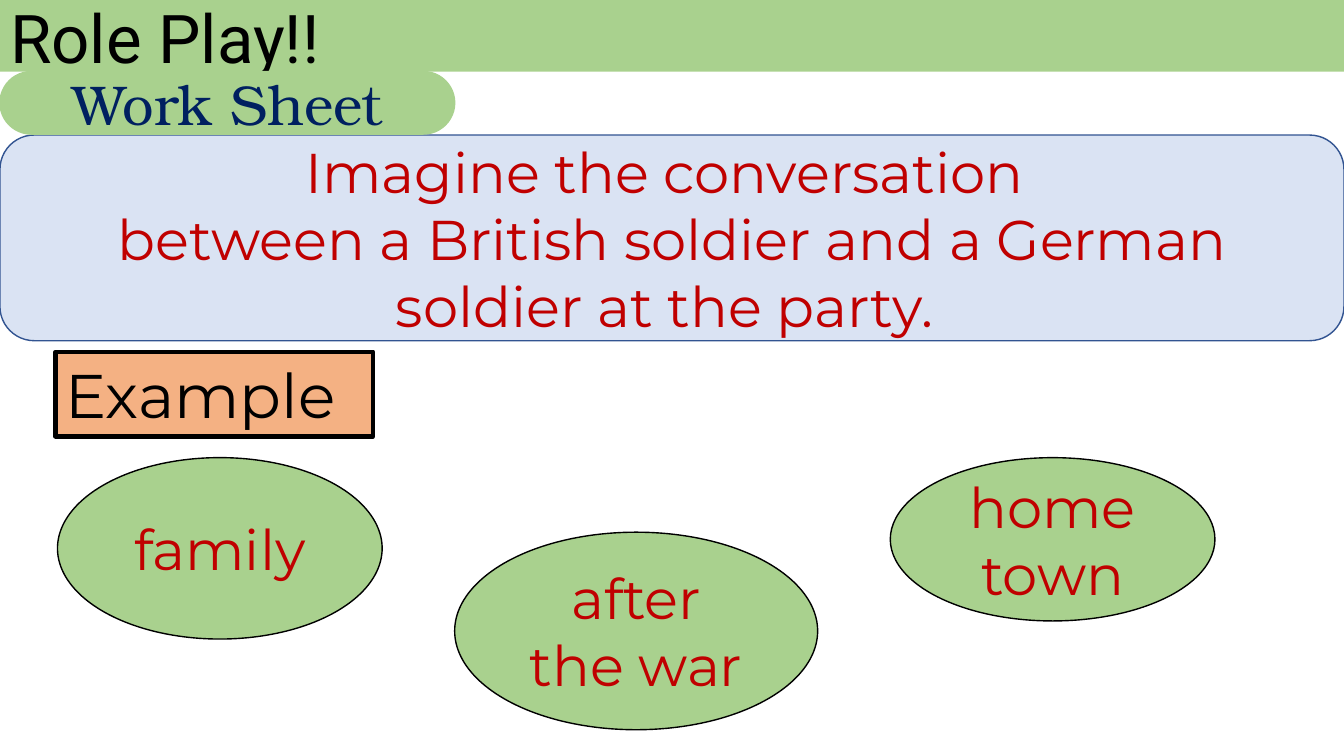
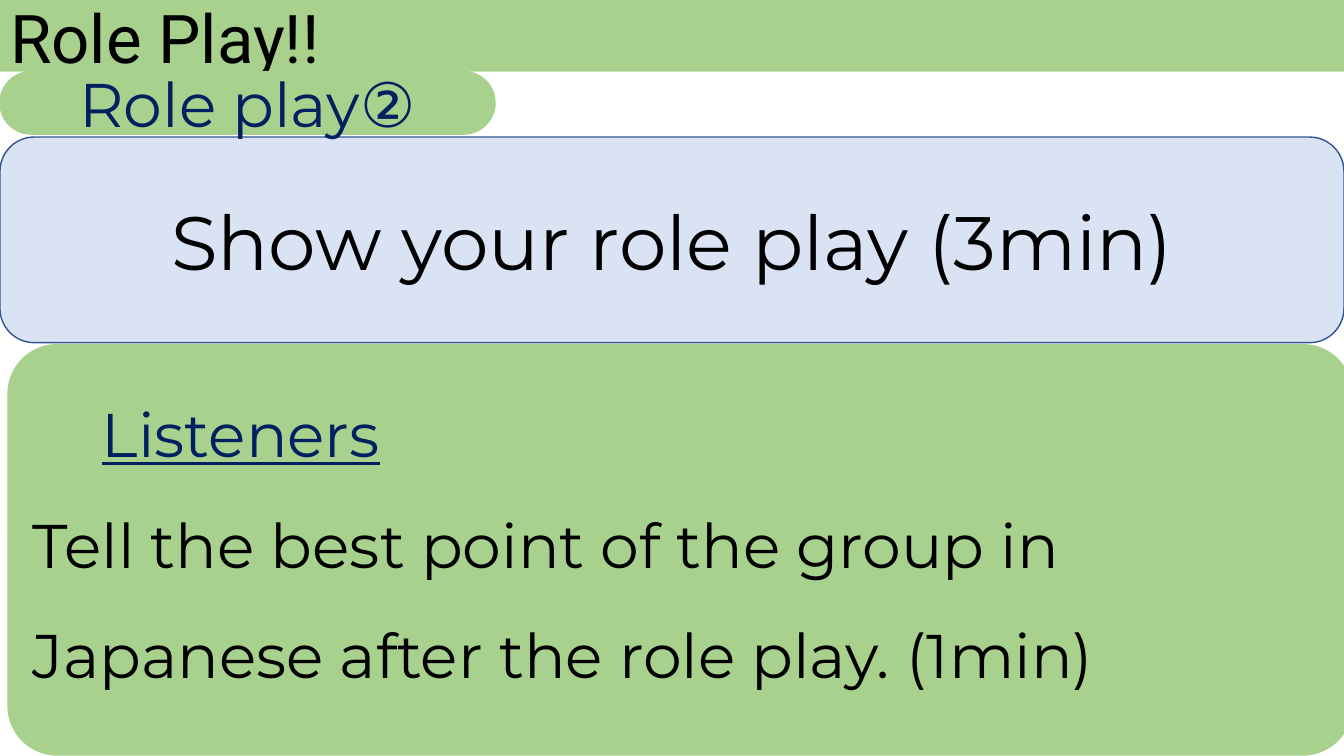
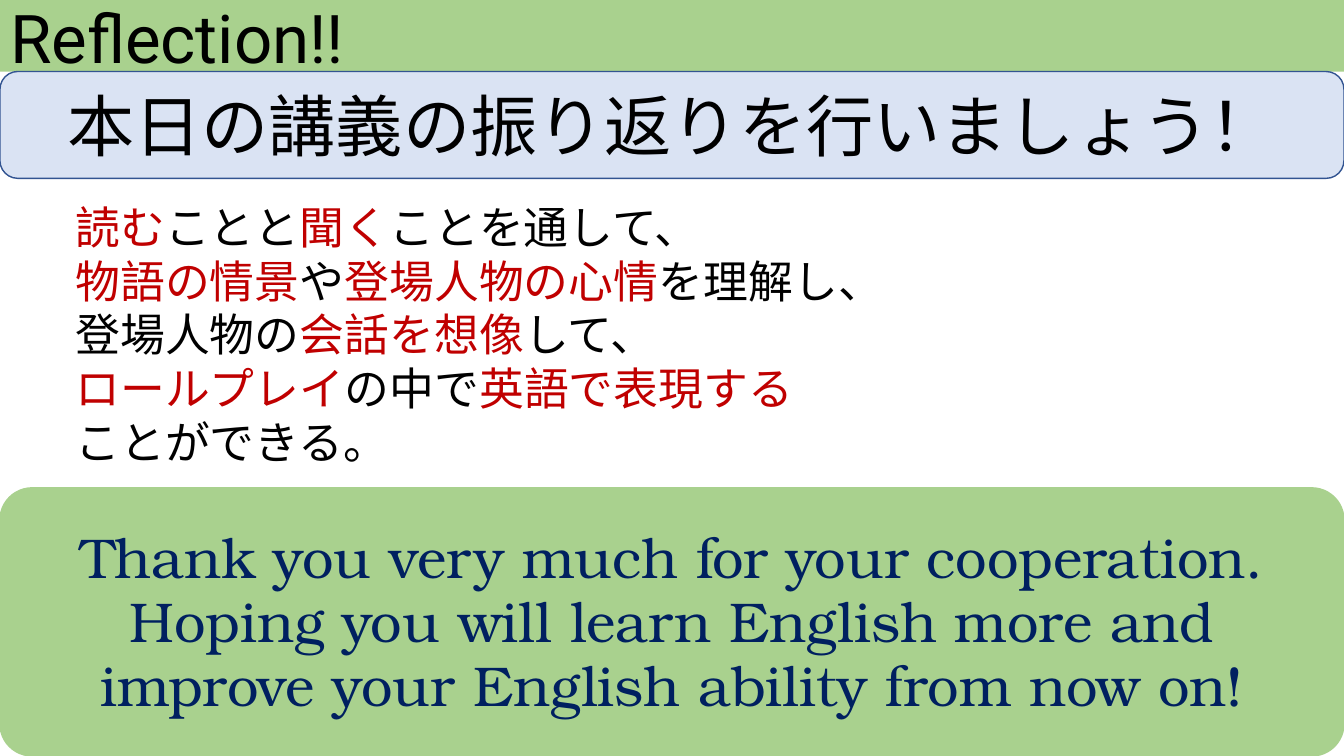
from dataclasses import dataclass

from lxml.etree import SubElement
from pptx import Presentation
from pptx.dml.color import RGBColor
from pptx.enum.shapes import MSO_SHAPE as SHAPE
from pptx.enum.text import MSO_ANCHOR as ANCHOR, MSO_AUTO_SIZE as AUTO_SIZE, PP_ALIGN as ALIGN
from pptx.oxml.ns import qn
from pptx.util import Emu, Pt

PX = 9144  # 100 px to the inch
WIDTH, HEIGHT = 1333, 750
BAND = 71


@dataclass(frozen=True)
class Theme:
    green: str = "A9D18E"
    pale_blue: str = "DAE3F3"
    blue_edge: str = "325491"
    orange: str = "F4B183"
    black: str = "000000"
    red: str = "C00000"
    navy: str = "002060"
    title_font: str = "Roboto"
    sans: str = "Montserrat"
    serif: str = "TeX Gyre Bonum"
    japanese: str = "Noto Sans CJK JP"
    small: int = 32
    body: int = 40
    large: int = 44
    title: int = 48
    huge: int = 54


T = Theme()


def write(frame, paragraphs, font, size, color, align=ALIGN.CENTER, spacing=None):
    """Fill a frame; each paragraph is a string or a list of (text, colour) runs."""
    frame.word_wrap = True
    frame.auto_size = AUTO_SIZE.NONE
    for index, content in enumerate(paragraphs):
        paragraph = frame.paragraphs[0] if index == 0 else frame.add_paragraph()
        paragraph.alignment = align
        paragraph.space_before = Pt(0)
        if spacing:
            paragraph.line_spacing = spacing
        runs = [(content, color)] if isinstance(content, str) else content
        for text, run_color in runs:
            run = paragraph.add_run()
            run.text = text
            run.font.size = Pt(size)
            run.font.color.rgb = RGBColor.from_string(run_color)
            run.font.name = font
            SubElement(run.font._element, qn("a:ea"), typeface=T.japanese)


def add_block(slide, preset, box, fill, edge, edge_width=1, corner=None):
    """Add a filled preset shape and return it; box is left, top, width, height in px."""
    block = slide.shapes.add_shape(preset, *(Emu(px * PX) for px in box))
    block.shadow.inherit = False
    block.fill.solid()
    block.fill.fore_color.rgb = RGBColor.from_string(fill)
    block.line.color.rgb = RGBColor.from_string(edge)
    block.line.width = Pt(edge_width)
    if corner is not None:
        block.adjustments[0] = corner
    return block


prs = Presentation()
prs.slide_width, prs.slide_height = Emu(WIDTH * PX), Emu(HEIGHT * PX)

# Every slide: the title sits in a green band across the top
slides = []
for heading in ("Role Play!!", "Role Play!!", "Reflection!!"):
    slide = prs.slides.add_slide(prs.slide_layouts[5])
    title = slide.shapes.title
    title.left = title.top = Emu(0)
    title.width, title.height = Emu(WIDTH * PX), Emu(BAND * PX)
    title.fill.solid()
    title.fill.fore_color.rgb = RGBColor.from_string(T.green)
    title.text_frame.vertical_anchor = ANCHOR.TOP
    title.text_frame.margin_bottom = 0
    write(title.text_frame, [heading], T.title_font, T.title, T.black, ALIGN.LEFT, 0.9)
    slides.append(slide)
worksheet, performance, reflection = slides

# Blue panel below each title
for slide, top, height, lines, font, size, color in (
    (worksheet, 134, 204,
     ["Imagine the conversation ",
      "between a British soldier and a German soldier at the party. "],
     T.sans, T.body, T.red),
    (performance, 136, 204, ["Show your role play (3min)"], T.sans, T.huge, T.black),
    (reflection, BAND, 106, ["本日の講義の振り返りを行いましょう！"],
     T.japanese, T.title, T.black),
):
    panel = add_block(slide, SHAPE.ROUNDED_RECTANGLE, (0, top, WIDTH, height),
                      T.pale_blue, T.blue_edge)
    write(panel.text_frame, lines, font, size, color)

# Section tabs of the two role play slides
for slide, width, label, font, size in (
    (worksheet, 451, "Work Sheet", T.serif, T.body),
    (performance, 491, "Role play②", T.sans, T.large),
):
    tab = add_block(slide, SHAPE.ROUNDED_RECTANGLE, (0, BAND, width, 62),
                    T.green, T.green, corner=0.5)
    write(tab.text_frame, [label], font, size, T.navy)

# Worksheet: example topics
for topic, box in (
    ("family", (57, 454, 322, 180)),
    ("home town", (883, 454, 322, 162)),
    ("after the war", (451, 528, 360, 196)),
):
    bubble = add_block(worksheet, SHAPE.OVAL, box, T.green, T.black)
    write(bubble.text_frame, [topic], T.sans, T.body, T.red)

example = add_block(worksheet, SHAPE.RECTANGLE, (55, 349, 315, 84), T.orange, T.black, 3)
write(example.text_frame, ["Example"], T.sans, T.large, T.black, ALIGN.LEFT)

# Performance: task for the listeners
listeners = add_block(performance, SHAPE.ROUNDED_RECTANGLE, (8, 342, WIDTH, 407),
                      T.green, T.green, corner=0.12)
task = listeners.text_frame
task.vertical_anchor = ANCHOR.TOP
task.margin_top = 0
write(task,
      [[("Listeners", T.navy)],
       "Tell the best point of the group in Japanese after the role play. (1min)"],
      T.sans, T.large, T.black, ALIGN.LEFT, Pt(79))
task.paragraphs[0].runs[0].font.underline = True
task.paragraphs[0]._p.get_or_add_pPr().set("marL", str(69 * PX))

# Reflection: closing words and lesson goals
thanks = add_block(reflection, SHAPE.ROUNDED_RECTANGLE, (0, 484, WIDTH, 266),
                   T.green, T.green, corner=0.12)
write(thanks.text_frame,
      ["Thank you very much for your cooperation.",
       "Hoping you will learn English more and improve your English ability from now on!"],
      T.serif, T.body, T.navy, spacing=Pt(45.8))

goals = reflection.shapes.add_textbox(*(Emu(px * PX) for px in (65, 193, 1196, 279)))
write(goals.text_frame,
      [[("読む", T.red), ("ことと", T.black), ("聞く", T.red), ("ことを通して、", T.black)],
       [("物語の情景", T.red), ("や", T.black), ("登場人物の心情", T.red),
        ("を理解し、", T.black)],
       [("登場人物の", T.black), ("会話を想像", T.red), ("して、", T.black)],
       [("ロールプレイ", T.red), ("の中で", T.black), ("英語で表現する", T.red)],
       "ことができる。"],
      T.japanese, T.small, T.black, ALIGN.LEFT)

prs.save("out.pptx")
